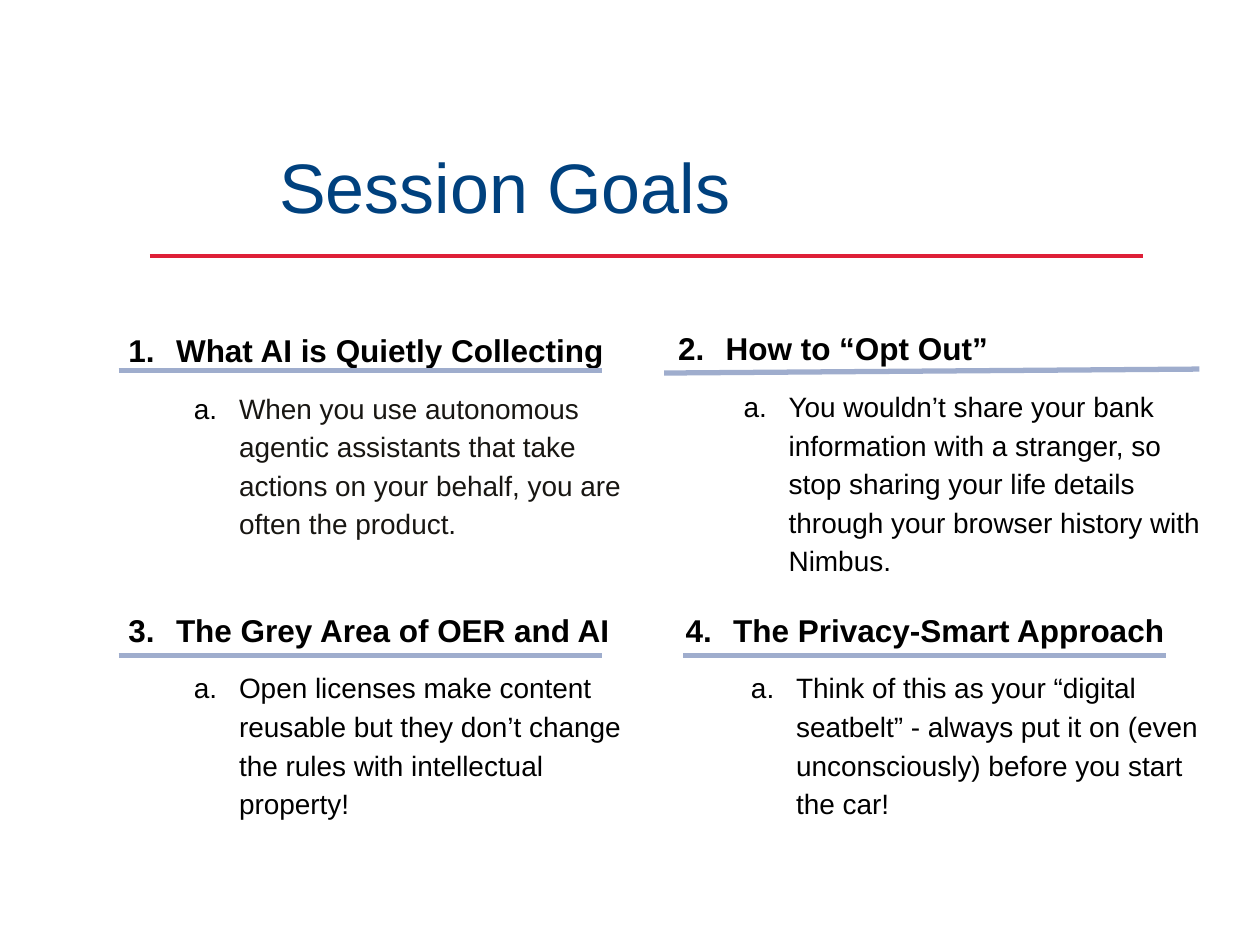
from lxml import etree
from pptx import Presentation
from pptx.dml.color import RGBColor
from pptx.enum.shapes import MSO_CONNECTOR
from pptx.enum.text import MSO_ANCHOR
from pptx.oxml.ns import qn
from pptx.util import Cm, Pt

STRAIGHT = MSO_CONNECTOR.STRAIGHT
BOTTOM = MSO_ANCHOR.BOTTOM
FONT = "Arial"
COLORS = {
    "title": "00417E",
    "title_rule": "DE1F37",
    "goal_rule": "9FADCD",
    "text": "000000",
    "soft_text": "181612",
}

TITLE_BOX = (5.38, 2.24, 20.02, 2.49)
TITLE_RULE = (3.02, 5.16, 23.04, 5.16)

# box, underline (left, start, end, width) inside the box, heading, detail, detail colour
GOALS = [
    ((2.03, 6.43, 10.74, 4.75), (0.36, 1.04, 1.04, 9.75),
     "What AI is Quietly Collecting",
     "When you use autonomous agentic assistants that take actions on your "
     "behalf, you are often the product.", "soft_text"),
    ((13.11, 6.4, 11.38, 4.8), (0.28, 1.12, 1.04, 10.79),
     "How to “Opt Out”",
     "You wouldn’t share your bank information with a stranger, so stop sharing "
     "your life details through your browser history with Nimbus.", "text"),
    ((2.03, 12.07, 10.74, 4.75), (0.36, 1.14, 1.14, 9.75),
     "The Grey Area of OER and AI",
     "Open licenses make content reusable but they don’t change the rules with "
     "intellectual property!", "text"),
    ((13.26, 12.07, 11.23, 4.75), (0.51, 1.14, 1.14, 9.73),
     "The Privacy-Smart Approach",
     "Think of this as your “digital seatbelt” - always put it on (even "
     "unconsciously) before you start the car!", "text"),
]


def add_rule(page, ends, color, weight):
    rule = page.shapes.add_connector(STRAIGHT, *map(Cm, ends))
    rule.line.color.rgb = RGBColor.from_string(COLORS[color])
    rule.line.width = Pt(weight)
    etree.SubElement(rule._element.spPr, qn("a:effectLst"))


def add_frame(page, box):
    frame = page.shapes.add_textbox(*map(Cm, box)).text_frame
    frame.word_wrap = True
    return frame


def add_span(para, text, size, color, bold=False):
    span = para.add_run()
    span.text = text
    span.font.name = FONT
    span.font.size = Pt(size)
    span.font.bold = bold
    span.font.color.rgb = RGBColor.from_string(COLORS[color])


def set_number(para, scheme, start, margin, hanging):
    properties = para._p.get_or_add_pPr()
    properties.set("marL", str(Cm(margin)))
    properties.set("indent", str(-Cm(hanging)))
    bullet_color = etree.SubElement(properties, qn("a:buClr"))
    etree.SubElement(bullet_color, qn("a:srgbClr"), val=COLORS["text"])
    etree.SubElement(properties, qn("a:buFont"), typeface=FONT)
    etree.SubElement(properties, qn("a:buAutoNum"), type=scheme, startAt=str(start))
    para.line_spacing = 1.15


def add_title(page, box):
    frame = add_frame(page, box)
    frame.vertical_anchor = BOTTOM
    para = frame.paragraphs[0]
    para.line_spacing = 0.9
    add_span(para, "Session Goals", 40, "title")


def add_goal(page, box, underline, number, heading, detail, detail_color):
    frame = add_frame(page, box)
    para = frame.paragraphs[0]
    set_number(para, "arabicPeriod", number, 1.27, 0.96)
    add_span(para, heading, 18, "text", bold=True)

    para = frame.add_paragraph()
    para.level = 1
    set_number(para, "alphaLcPeriod", 1, 2.54, 0.91)
    para.space_before = Pt(10)
    add_span(para, detail, 16, detail_color)

    left, top = box[:2]
    inset, start, end, width = underline
    ends = (left + inset, top + start, left + inset + width, top + end)
    add_rule(page, ends, "goal_rule", 3)


def main():
    deck = Presentation()
    deck.slide_width, deck.slide_height = Cm(25.4), Cm(19.05)
    page = deck.slides.add_slide(deck.slide_layouts[6])
    add_rule(page, TITLE_RULE, "title_rule", 2.5)
    add_title(page, TITLE_BOX)
    for number, (box, underline, *content) in enumerate(GOALS, 1):
        add_goal(page, box, underline, number, *content)
    deck.save("out.pptx")


if __name__ == "__main__":
    main()
